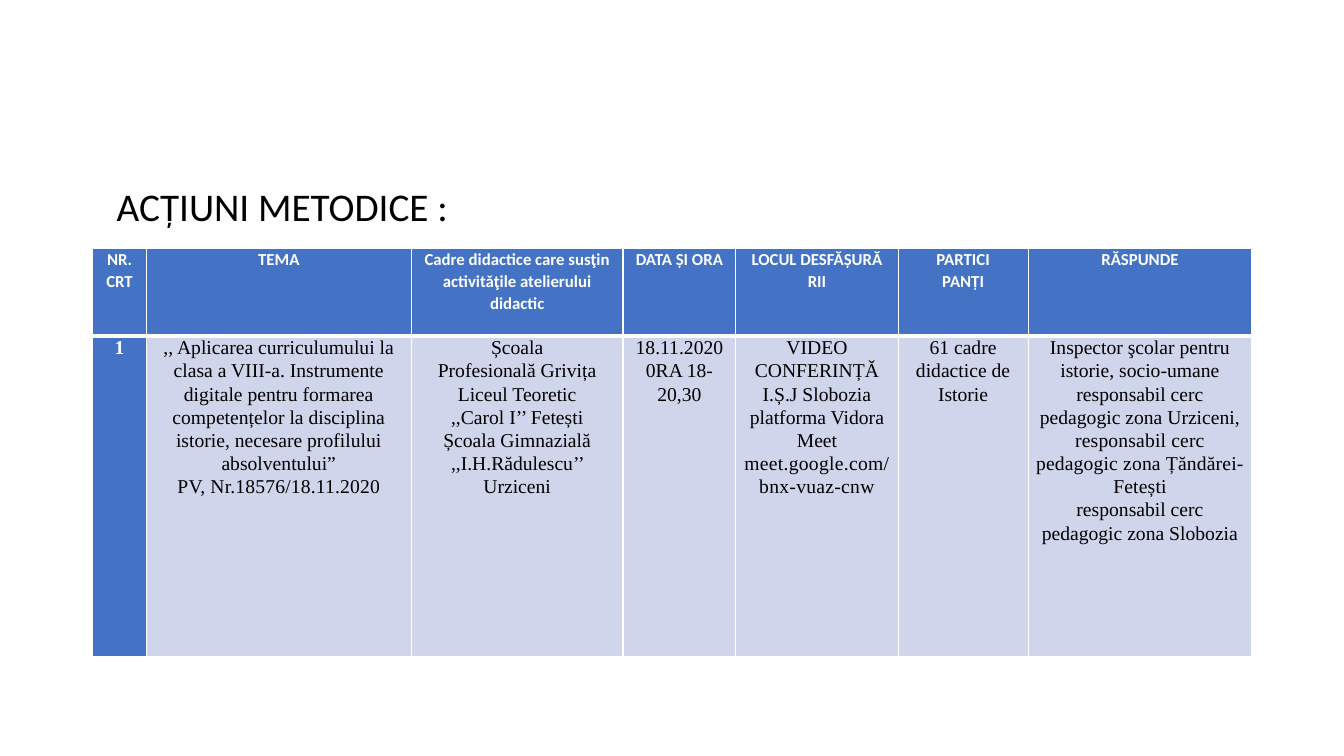
from lxml import etree
from pptx import Presentation
from pptx.dml.color import RGBColor
from pptx.enum.text import MSO_ANCHOR, PP_ALIGN
from pptx.oxml.ns import qn
from pptx.util import Pt

CENTER, LEFT, TOP = PP_ALIGN.CENTER, PP_ALIGN.LEFT, MSO_ANCHOR.TOP

TITLE = ["ACȚIUNI METODICE :"]
HEADS = [
    ["NR. CRT"],
    ["TEMA"],
    ["Cadre didactice care susţin activitǎţile atelierului didactic"],
    ["DATA ȘI ORA"],
    ["LOCUL DESFĂȘURĂ", "RII"],
    ["PARTICI", "PANȚI"],
    ["RĂSPUNDE"],
]
BODY = [
    ["1"],
    [
        ",, Aplicarea curriculumului la clasa a VIII-a. Instrumente digitale "
        "pentru formarea competențelor la disciplina istorie, necesare "
        "profilului absolventuluiˮ",
        [("PV, Nr.18576/18.11.2020", 0.1)],
    ],
    [
        "Școala",
        "Profesională Grivița",
        "Liceul Teoretic",
        ",,Carol I’’ Fetești",
        "Școala Gimnazială",
        ",,I.H.Rădulescu’’ Urziceni",
    ],
    ["18.11.2020", "0RA 18-20,30"],
    [
        "VIDEO",
        "CONFERINȚǍ",
        "I.Ș.J Slobozia",
        [("platforma Vidora Meet ", 0), ("meet.google.com/bnx-vuaz-cnw", 0.2)],
    ],
    ["61 cadre didactice de Istorie"],
    [
        "Inspector şcolar pentru istorie, socio-umane",
        [
            ("responsabil cerc pedagogic zona Urziceni, ", 0),
            ("responsabil cerc pedagogic zona Țăndărei-Fetești", 0.1),
        ],
        "responsabil cerc pedagogic zona Slobozia",
    ],
]
COLS = [38.2, 189.4, 151.2, 80.6, 115.9, 92.9, 159.8]
ROWS = [62.6, 229]

THEME = {
    "sans": "Calibri", "serif": "Times New Roman",
    "title": 28, "head": 12, "body": 14,
    "blue": "4472C4", "pale": "CFD5EA", "white": "FFFFFF", "black": "000000",
    "thin": 1, "thick": 3,
}


def write(frame, paras, font, size, color, bold=False, align=LEFT, lead=1.0):
    frame.word_wrap = True
    for i, item in enumerate(paras):
        para = frame.paragraphs[0] if i == 0 else frame.add_paragraph()
        para.alignment = align
        para.line_spacing = lead
        for text, track in [(item, 0)] if isinstance(item, str) else item:
            run = para.add_run()
            run.text = text
            run.font.name = THEME[font]
            run.font.size = Pt(THEME[size])
            run.font.color.rgb = RGBColor.from_string(THEME[color])
            run.font.bold = bold
            if track:
                run.font._element.set("spc", str(round(track * 100)))


def border(cell, **sides):
    props = cell._tc.get_or_add_tcPr()
    for side in "LRTB":
        width = Pt(THEME[sides.get(side, "thin")])
        line = etree.SubElement(props, qn("a:ln" + side), w=str(width))
        fill = etree.SubElement(line, qn("a:solidFill"))
        etree.SubElement(fill, qn("a:srgbClr"), val=THEME["white"])


def paint(cell, color):
    cell.margin_left = cell.margin_right = Pt(5.4)
    cell.margin_top = cell.margin_bottom = 0
    cell.vertical_anchor = TOP
    cell.fill.solid()
    cell.fill.fore_color.rgb = RGBColor.from_string(THEME[color])


def main():
    deck = Presentation()
    deck.slide_width, deck.slide_height = Pt(960), Pt(540)
    slide = deck.slides.add_slide(deck.slide_layouts[6])

    grid = slide.shapes.add_table(
        len(ROWS), len(COLS), Pt(66.3), Pt(177.2), Pt(sum(COLS)), Pt(sum(ROWS))
    ).table
    for col, width in zip(grid.columns, COLS):
        col.width = Pt(width)
    for row, height in zip(grid.rows, ROWS):
        row.height = Pt(height)

    for c, paras in enumerate(HEADS):
        cell = grid.cell(0, c)
        border(cell, B="thick")
        paint(cell, "blue")
        write(cell.text_frame, paras, "sans", "head", "white",
              bold=True, align=CENTER, lead=1.07)

    for c, paras in enumerate(BODY):
        cell, first = grid.cell(1, c), c == 0
        border(cell, T="thick")
        paint(cell, "blue" if first else "pale")
        write(cell.text_frame, paras, "serif", "body",
              "white" if first else "black",
              bold=first, align=CENTER, lead=1.07)

    title = slide.shapes.add_textbox(Pt(76.3), Pt(126.7), Pt(273.6), Pt(41))
    write(title.text_frame, TITLE, "sans", "title", "black")
    deck.save("out.pptx")


if __name__ == "__main__":
    main()
